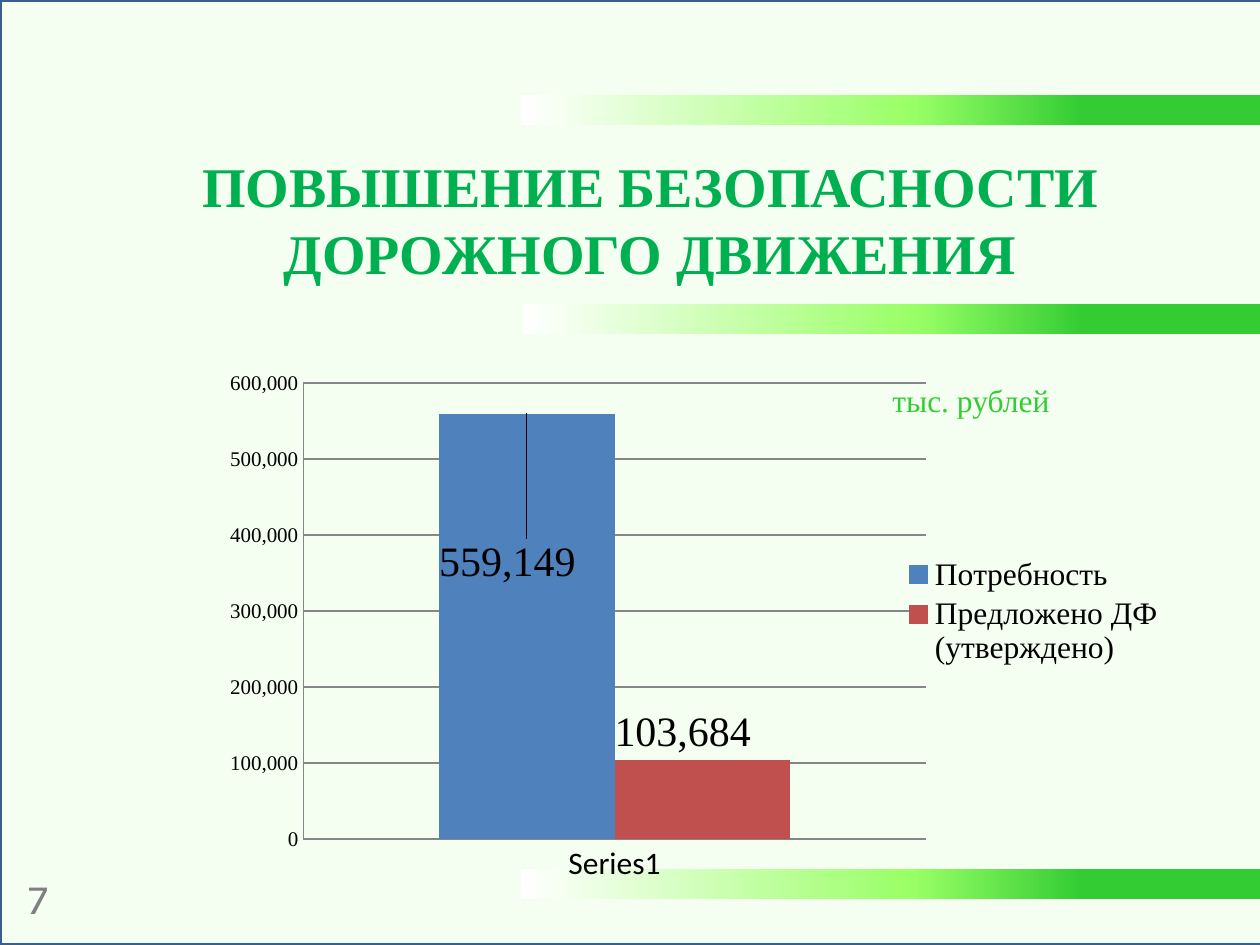
from pptx import Presentation
from pptx.chart.data import CategoryChartData
from pptx.dml.color import RGBColor
from pptx.enum.chart import XL_CHART_TYPE, XL_LABEL_POSITION, XL_LEGEND_POSITION, XL_TICK_MARK
from pptx.enum.shapes import MSO_SHAPE
from pptx.enum.text import PP_ALIGN
from pptx.oxml import parse_xml
from pptx.oxml.ns import nsdecls, qn
from pptx.util import Pt
from lxml.etree import SubElement

PX = 914400 / 126
SERIF = "Times New Roman"
GREEN = RGBColor(0x00, 0xB0, 0x50)
LEAF = RGBColor(0x33, 0xCC, 0x33)
LIME = RGBColor(0x99, 0xFF, 0x66)
WHITE = RGBColor(0xFF, 0xFF, 0xFF)
NAVY = RGBColor(0x3A, 0x5F, 0x8C)
GRAY = RGBColor(0x80, 0x80, 0x80)
RULE = RGBColor(0x86, 0x86, 0x86)
BLACK = RGBColor(0, 0, 0)
BLUE = RGBColor(0x4F, 0x81, 0xBD)
RED = RGBColor(0xC0, 0x50, 0x4D)

deck = Presentation()
deck.slide_width = round(1260 * PX)
deck.slide_height = round(945 * PX)
slide = deck.slides.add_slide(deck.slide_layouts[6])


def write(text, box, size, color, font=SERIF, bold=False, align=PP_ALIGN.LEFT, wrap=True):
    frame = slide.shapes.add_textbox(*[round(n * PX) for n in box]).text_frame
    frame.word_wrap = wrap
    par = frame.paragraphs[0]
    par.alignment = align
    run = par.add_run()
    run.text = text
    run.font.size = Pt(size)
    run.font.name = font
    run.font.bold = bold
    run.font.color.rgb = color


def layout(**parts):
    tags = "".join(f'<c:{key} val="{val}"/>' for key, val in parts.items())
    return parse_xml(f'<c:layout {nsdecls("c")}><c:manualLayout>{tags}</c:manualLayout></c:layout>')


back = slide.shapes.add_shape(MSO_SHAPE.RECTANGLE, 0, 0, round(1262 * PX), round(945 * PX))
back.shadow.inherit = False
back.fill.solid()
back.fill.fore_color.rgb = LIME
tint = back.fill._xPr.find(qn("a:solidFill"))[0]
SubElement(tint, qn("a:alpha")).set("val", "9000")
back.line.color.rgb = NAVY
back.line.width = Pt(2)

write("7", (16, 866, 39, 63), 24, GRAY, font="Karla")
write("ПОВЫШЕНИЕ БЕЗОПАСНОСТИ ДОРОЖНОГО ДВИЖЕНИЯ", (40, 145, 1221, 149), 32, GREEN,
      bold=True, align=PP_ALIGN.CENTER)

stops = "".join(
    f'<a:gs pos="{pos}000"><a:srgbClr val="{color}"/></a:gs>'
    for pos, color in ((24, LEAF), (47, LIME), (100, WHITE))
)
for left, top in ((521, 95), (523, 304), (521, 869)):
    band = slide.shapes.add_shape(MSO_SHAPE.RECTANGLE, *[round(n * PX) for n in (left, top, 739, 30)])
    band.shadow.inherit = False
    band.line.fill.background()
    band.fill.gradient()
    old = band.fill._xPr.find(qn("a:gradFill"))
    old.getparent().replace(old, parse_xml(
        f'<a:gradFill {nsdecls("a")} rotWithShape="1"><a:gsLst>{stops}</a:gsLst>'
        '<a:lin ang="10800000" scaled="0"/></a:gradFill>'))

data = CategoryChartData(number_format="#,##0")
data.categories = ["Series1"]
data.add_series("Потребность", [559149])
data.add_series("Предложено ДФ (утверждено)", [103684])
chart = slide.shapes.add_chart(XL_CHART_TYPE.COLUMN_CLUSTERED,
                               *[round(n * PX) for n in (194, 359, 976, 523)], data).chart
chart.font.size = Pt(18)
chart.font.name = "Calibri"
chart.font.color.rgb = BLACK
chart.has_title = False

area = chart._chartSpace.chart.plotArea
for node in area.findall(qn("c:layout")):
    area.remove(node)
area.insert(0, layout(layoutTarget="inner", xMode="edge", yMode="edge",
                      x=0.112, y=0.046, w=0.638, h=0.876))

chart.has_legend = True
key = chart.legend
key.position = XL_LEGEND_POSITION.RIGHT
key.include_in_layout = False
key.font.size = Pt(18)
key.font.name = SERIF
for node in key._element.findall(qn("c:layout")):
    key._element.remove(node)
key._element.find(qn("c:legendPos")).addnext(
    layout(xMode="edge", yMode="edge", x=0.72, y=0.37, w=0.28, h=0.23))

for axis in (chart.category_axis, chart.value_axis):
    axis.major_tick_mark = axis.minor_tick_mark = XL_TICK_MARK.NONE
    axis.format.line.color.rgb = RULE
scale = chart.value_axis
scale.minimum_scale = 0
scale.maximum_scale = 600000
scale.major_unit = 100000
scale.major_gridlines.format.line.color.rgb = RULE
scale.tick_labels.font.size = Pt(12)
scale.tick_labels.font.name = SERIF
scale.tick_labels.number_format = "#,##0"
scale.tick_labels.number_format_is_linked = False

plot = chart.plots[0]
plot.gap_width = 155
plot.overlap = 0
plot.vary_by_categories = False
for bar, color, drop in zip(plot.series, (BLUE, RED), (0.34, 0)):
    bar.format.fill.solid()
    bar.format.fill.fore_color.rgb = color
    label = bar.points[0].data_label
    label.font.size = Pt(24)
    label.font.name = SERIF
    label.font.color.rgb = BLACK
    label.position = XL_LABEL_POSITION.OUTSIDE_END
    bar._element.xpath(".//c:dLbl/c:idx")[0].addnext(layout(x=-0.02, y=drop))

write("тыс. рублей", (880, 375, 184, 50), 18, LEAF, wrap=False)

deck.save("out.pptx")
